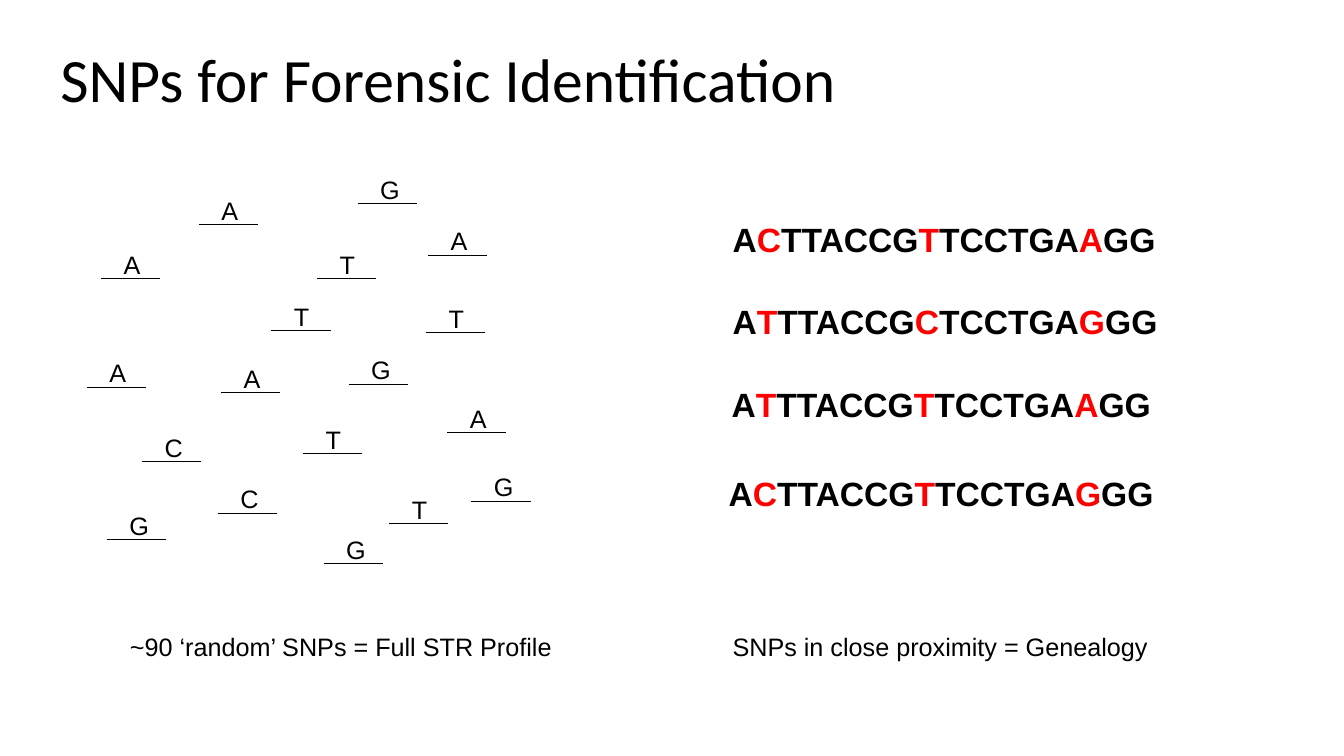
from dataclasses import dataclass

from lxml.etree import SubElement
from pptx import Presentation
from pptx.dml.color import RGBColor
from pptx.enum.shapes import MSO_CONNECTOR as Connector
from pptx.enum.text import MSO_ANCHOR as Anchor, MSO_AUTO_SIZE as AutoSize, PP_ALIGN as Align
from pptx.oxml.ns import qn
from pptx.shapes.shapetree import GroupShapes, SlideShapes
from pptx.slide import Slide
from pptx.util import Pt

COLOURS = {"text": "000000", "variant": "FF0000"}
LETTER_WIDTHS = {"A": 26.6, "C": 27.4, "G": 28.8, "T": 25.9}
UNDERLINE_LENGTH = 42.2
LETTER_INDENT, LETTER_RISE = 9, 24.5
LABEL_HEIGHT, SEQUENCE_HEIGHT = 29, 36
CAPTION_TOP = 447.1

LABEL_FORMAT = {"name": "Arial", "size": Pt(18)}
SEQUENCE_FORMAT = {"name": "Arial", "size": Pt(24), "bold": True}
TITLE_FORMAT = {"name": "Calibri", "size": Pt(44)}


@dataclass(frozen=True)
class Box:
    left: float
    top: float
    width: float
    height: float


@dataclass(frozen=True)
class Snp:
    """One base standing on an underline that starts at left, top."""
    base: str
    left: float
    top: float


@dataclass(frozen=True)
class Sequence:
    variants: str
    left: float
    top: float


@dataclass(frozen=True)
class Caption:
    text: str
    left: float
    width: float


SNPS = [
    Snp("A", 142, 160.6), Snp("G", 255.4, 145.4), Snp("C", 101.5, 329.8),
    Snp("A", 72.2, 198.7), Snp("T", 226.6, 198.7), Snp("G", 231.1, 402.5),
    Snp("C", 155.7, 366.5), Snp("G", 249, 274.3), Snp("G", 336.8, 357.8),
    Snp("G", 76.3, 385.2), Snp("T", 193.9, 236.2), Snp("T", 304.4, 237.6),
    Snp("T", 278.1, 373.7), Snp("T", 216.5, 324), Snp("A", 305.8, 182.2),
    Snp("A", 157.9, 280.1), Snp("A", 319.6, 308.9), Snp("A", 62.1, 276.5),
]
SEQUENCES = [
    Sequence("CTA", 516.2, 152.6), Sequence("TCG", 516.2, 211.7),
    Sequence("TTA", 515.5, 270.7), Sequence("CTG", 513.4, 334.1),
]
CAPTIONS = [
    Caption("~90 ‘random’ SNPs = Full STR Profile", 85.7, 319),
    Caption("SNPs in close proximity = Genealogy", 516.2, 313.9),
]


def add_run(paragraph, text: str, font_format: dict, colour: str = "text") -> None:
    run = paragraph.add_run()
    run.text = text
    for name, value in font_format.items():
        setattr(run.font, name, value)
    run.font.color.rgb = RGBColor.from_string(COLOURS[colour])


def add_label(shapes: SlideShapes | GroupShapes, box: Box):
    """Add an unwrapped text box and return its empty paragraph."""
    shape = shapes.add_textbox(Pt(box.left), Pt(box.top), Pt(box.width), Pt(box.height))
    shape.text_frame.word_wrap = False
    shape.text_frame.auto_size = AutoSize.SHAPE_TO_FIT_TEXT
    return shape.text_frame.paragraphs[0]


def draw_title(slide: Slide) -> None:
    title = slide.shapes.title
    placement = {"left": Pt(36), "top": Pt(31.7), "width": Pt(602), "height": Pt(90)}
    for name, value in placement.items():
        setattr(title, name, value)
    frame_format = {"vertical_anchor": Anchor.TOP, "word_wrap": True, "auto_size": AutoSize.NONE}
    for name, value in frame_format.items():
        setattr(title.text_frame, name, value)
    paragraph = title.text_frame.paragraphs[0]
    paragraph.alignment = Align.LEFT
    paragraph.line_spacing = 0.9
    add_run(paragraph, "SNPs for Forensic Identification", TITLE_FORMAT)


def draw_snp(slide: Slide, snp: Snp) -> None:
    group = slide.shapes.add_group_shape()
    underline = group.shapes.add_connector(
        Connector.STRAIGHT, Pt(snp.left), Pt(snp.top),
        Pt(snp.left + UNDERLINE_LENGTH), Pt(snp.top))
    underline.line.width = Pt(0.5)
    underline.line.color.rgb = RGBColor.from_string(COLOURS["text"])
    SubElement(underline._element.spPr, qn("a:effectLst"))
    box = Box(snp.left + LETTER_INDENT, snp.top - LETTER_RISE,
              LETTER_WIDTHS[snp.base], LABEL_HEIGHT)
    add_run(add_label(group.shapes, box), snp.base, LABEL_FORMAT)


def draw_sequence(slide: Slide, sequence: Sequence) -> None:
    """Write the shared bases with the three variant bases highlighted."""
    box = Box(sequence.left, sequence.top, 319.7, SEQUENCE_HEIGHT)
    paragraph = add_label(slide.shapes, box)
    add_run(paragraph, "A", SEQUENCE_FORMAT)
    for variant, shared in zip(sequence.variants, ("TTACCG", "TCCTGA", "GG")):
        add_run(paragraph, variant, SEQUENCE_FORMAT, "variant")
        add_run(paragraph, shared, SEQUENCE_FORMAT)


def draw_caption(slide: Slide, caption: Caption) -> None:
    box = Box(caption.left, CAPTION_TOP, caption.width, LABEL_HEIGHT)
    add_run(add_label(slide.shapes, box), caption.text, LABEL_FORMAT)


def main() -> None:
    presentation = Presentation()
    presentation.slide_width, presentation.slide_height = Pt(960), Pt(540)
    slide = presentation.slides.add_slide(presentation.slide_layouts.get_by_name("Title Only"))
    draw_title(slide)
    for snp in SNPS:
        draw_snp(slide, snp)
    for sequence in SEQUENCES:
        draw_sequence(slide, sequence)
    for caption in CAPTIONS:
        draw_caption(slide, caption)
    presentation.save("out.pptx")


if __name__ == "__main__":
    main()
